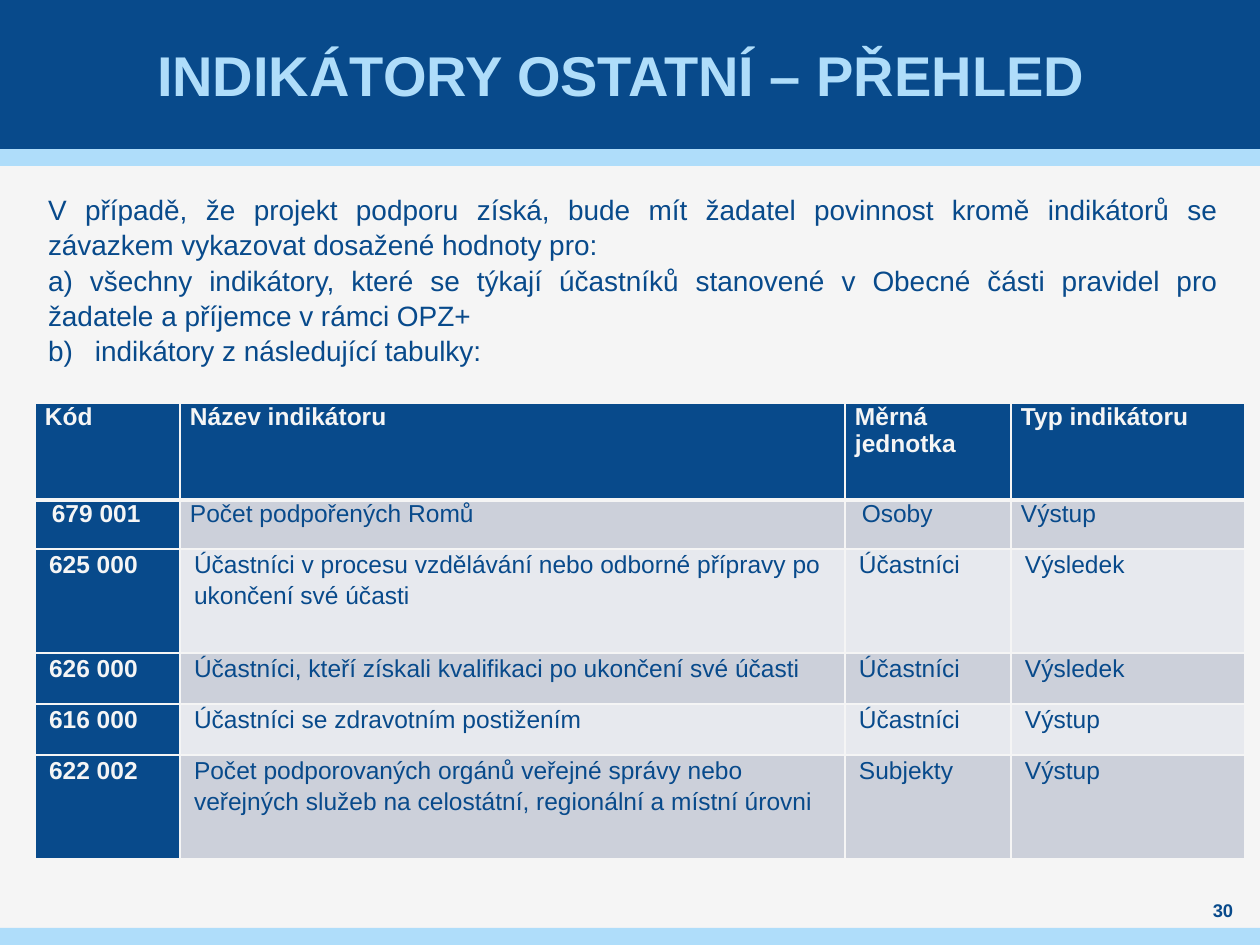
"""Build the slide with the overview of the other indicators."""
from dataclasses import dataclass

from pptx import Presentation
from pptx.dml.color import RGBColor
from pptx.enum import shapes, text
from pptx.oxml import parse_xml
from pptx.oxml.ns import nsdecls
from pptx.util import Pt

EMU_PER_PX = 914400 / 126
FONT = "Arial"
NAVY = RGBColor(0x08, 0x4A, 0x8B)
SKY = RGBColor(0xAF, 0xDD, 0xFA)
PAPER = RGBColor(0xF5, 0xF5, 0xF5)
BANDS = (RGBColor(0xCC, 0xD0, 0xDA), RGBColor(0xE7, 0xE9, 0xEE))
ALIGN = text.PP_ALIGN
ANCHOR = text.MSO_ANCHOR


@dataclass(frozen=True)
class Box:
    """A rectangle in px."""
    left: int
    top: int
    width: int
    height: int

    def emu(self) -> tuple[int, ...]:
        return tuple(map(px, (self.left, self.top, self.width, self.height)))


@dataclass(frozen=True)
class Bar:
    """A coloured band across the slide."""
    box: Box
    color: RGBColor


@dataclass(frozen=True)
class Row:
    """A table row with its height in px and its cell texts."""
    height: int
    cells: tuple[str, ...]
    inset: int = 9
    line: float = 1.1
    after: int = 6


BARS = (
    Bar(Box(0, 149, 1260, 17), SKY),
    Bar(Box(0, 0, 1260, 149), NAVY),
    Bar(Box(0, 928, 1260, 17), SKY),
)
COLUMNS = (145, 665, 166, 234)
ROWS = (
    Row(97, ("Kód", "Název indikátoru", "Měrná jednotka", "Typ indikátoru"), 5, 1.0, 3),
    Row(49, (" 679 001", "Počet podpořených Romů", " Osoby", "Výstup"), 5, 1.0, 3),
    Row(104, ("625 000", "Účastníci v procesu vzdělávání nebo odborné přípravy po ukončení své účasti",
              "Účastníci", "Výsledek")),
    Row(51, ("626 000", "Účastníci, kteří získali kvalifikaci po ukončení své účasti",
             "Účastníci", "Výsledek")),
    Row(51, ("616 000", "Účastníci se zdravotním postižením", "Účastníci", "Výstup")),
    Row(104, ("622 002", "Počet podporovaných orgánů veřejné správy nebo veřejných služeb "
              "na celostátní, regionální a místní úrovni", "Subjekty", "Výstup")),
)
INTRO = (
    "V případě, že projekt podporu získá, bude mít žadatel povinnost kromě indikátorů "
    "se závazkem vykazovat dosažené hodnoty pro:",
    "a) všechny indikátory, které se týkají účastníků stanovené v Obecné části pravidel "
    "pro žadatele a příjemce v rámci OPZ+ ",
    "indikátory z následující tabulky:",
)


def px(n: float) -> int:
    """Turn px into EMU."""
    return round(n * EMU_PER_PX)


def write(p, content: str, *, size: float, color: RGBColor, bold: bool = False,
          align=ALIGN.LEFT, line: float = 1.0, before: int = 0, after: int = 0,
          margin: int = 0, indent: int = 0, number: int = 0) -> None:
    """Fill a paragraph with one formatted run, lettered from number if given."""
    p.alignment, p.line_spacing = align, line
    p.space_before, p.space_after = Pt(before), Pt(after)
    pPr = p._p.get_or_add_pPr()
    pPr.set("marL", str(px(margin)))
    pPr.set("indent", str(px(indent)))
    bullet = f'buAutoNum {nsdecls("a")} type="alphaLcParenR" startAt="{number}"'
    pPr.append(parse_xml(f"<a:{bullet}/>" if number else f'<a:buNone {nsdecls("a")}/>'))
    r = p.add_run()
    r.text = content
    r.font.name, r.font.size, r.font.bold = FONT, Pt(size), bold
    r.font.color.rgb = color


def set_frame(sp, box: Box, anchor, inset_x: int = 0, inset_y: int = 0):
    """Place a text shape and return its prepared text frame."""
    sp.left, sp.top, sp.width, sp.height = box.emu()
    tf = sp.text_frame
    tf.word_wrap, tf.auto_size, tf.vertical_anchor = True, text.MSO_AUTO_SIZE.NONE, anchor
    tf.margin_left = tf.margin_right = px(inset_x)
    tf.margin_top = tf.margin_bottom = px(inset_y)
    return tf


def add_bar(s, bar: Bar, index: int) -> None:
    """Draw a band behind the placeholders."""
    sp = s.shapes.add_shape(shapes.MSO_SHAPE.RECTANGLE, *bar.box.emu())
    sp.shadow.inherit = False
    sp.fill.solid()
    sp.fill.fore_color.rgb = bar.color
    sp.line.fill.background()
    s.shapes._spTree.insert(2 + index, sp._element)


def set_borders(cell, bottom: int = 1, top: int = 1) -> None:
    """Outline a cell with light lines."""
    tcPr = cell._tc.get_or_add_tcPr()
    widths = {"lnL": 1, "lnR": 1, "lnT": top, "lnB": bottom}
    for index, (tag, width) in enumerate(widths.items()):
        tcPr.insert(index, parse_xml(
            f'<a:{tag} {nsdecls("a")} w="{Pt(width)}"><a:solidFill>'
            f'<a:srgbClr val="{PAPER}"/></a:solidFill></a:{tag}>'))


def add_indicator_table(s, left: int, top: int) -> None:
    """Draw the table of indicators."""
    box = Box(left, top, sum(COLUMNS), sum(row.height for row in ROWS))
    table = s.shapes.add_table(len(ROWS), len(COLUMNS), *box.emu()).table
    for column, width in zip(table.columns, COLUMNS):
        column.width = px(width)
    for i, row in enumerate(ROWS):
        table.rows[i].height = px(row.height)
        for j, content in enumerate(row.cells):
            cell = table.cell(i, j)
            head = i == 0 or j == 0
            cell.margin_left = cell.margin_right = px(row.inset)
            cell.margin_top = cell.margin_bottom = 0
            cell.fill.solid()
            cell.fill.fore_color.rgb = NAVY if head else BANDS[(i - 1) % 2]
            set_borders(cell, bottom=3 if i == 0 else 1, top=3 if i == 1 else 1)
            write(cell.text_frame.paragraphs[0], content, size=14, bold=head,
                  color=PAPER if head else NAVY, line=row.line, before=3,
                  after=row.after, margin=5)


def main() -> None:
    """Build and save the slide."""
    prs = Presentation()
    prs.slide_width, prs.slide_height = px(1260), px(945)
    s = prs.slides.add_slide(prs.slide_layouts[1])
    s.background.fill.solid()
    s.background.fill.fore_color.rgb = PAPER
    for index, bar in enumerate(BARS):
        add_bar(s, bar, index)

    tf = set_frame(s.shapes.title, Box(49, 0, 1160, 149), ANCHOR.MIDDLE, 5)
    write(tf.paragraphs[0], "INDIKÁTORY OSTATNÍ – PŘEHLED ", size=32, color=SKY,
          bold=True, align=ALIGN.CENTER)

    page = s.shapes.add_textbox(0, 0, 0, 0)
    tf = set_frame(page, Box(1191, 898, 64, 25), ANCHOR.MIDDLE)
    write(tf.paragraphs[0], "30", size=10.5, color=NAVY, bold=True,
          align=ALIGN.CENTER, after=6)

    tf = set_frame(s.placeholders[1], Box(35, 185, 1196, 585), ANCHOR.TOP, 13, 6)
    for i, content in enumerate(INTRO):
        p = tf.add_paragraph() if i else tf.paragraphs[0]
        lettered = dict(margin=47, indent=-47, number=2) if i == 2 else {}
        write(p, content, size=16, color=NAVY, align=ALIGN.JUSTIFY, line=1.05, **lettered)

    add_indicator_table(s, 35, 403)
    prs.save("out.pptx")


if __name__ == "__main__":
    main()
